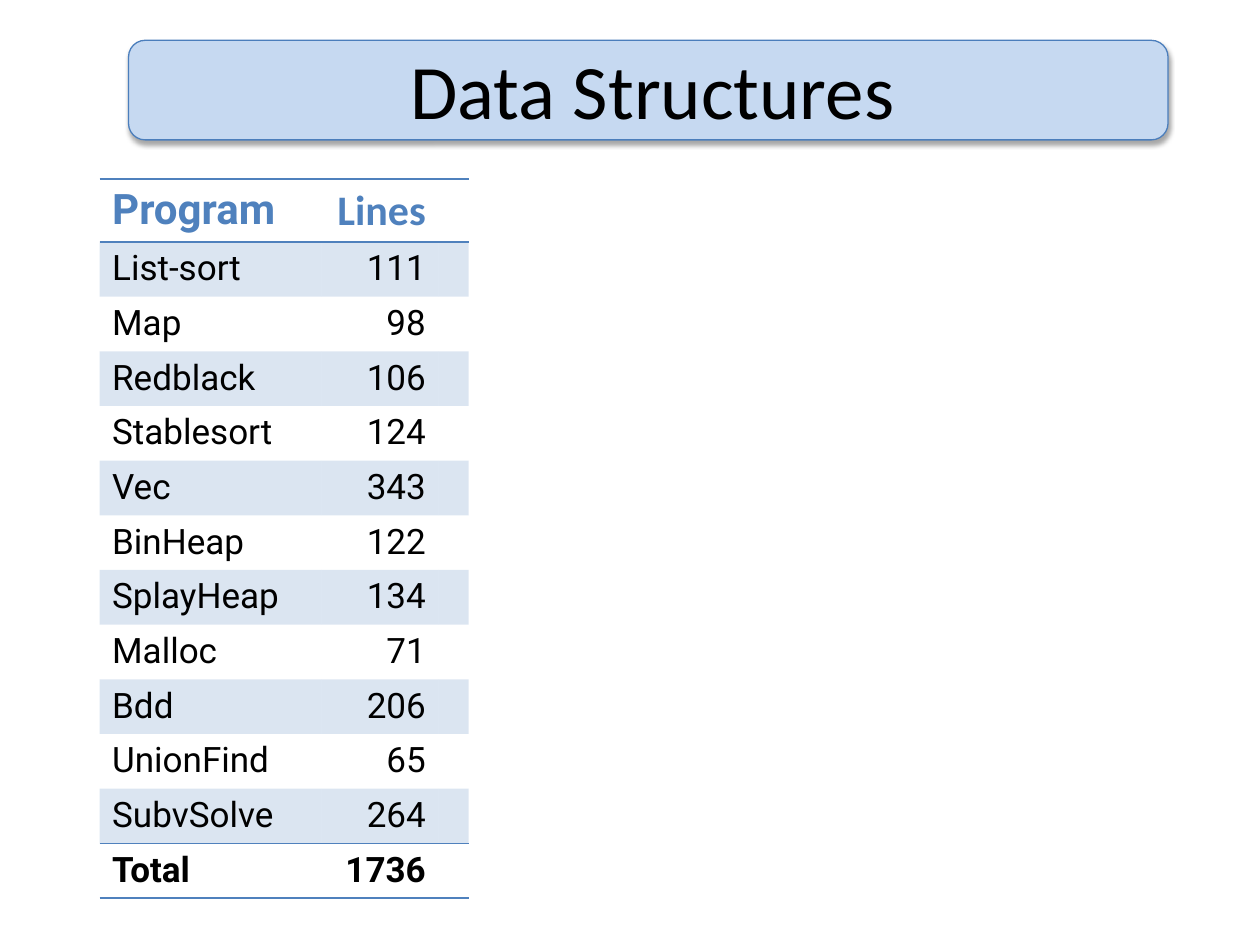
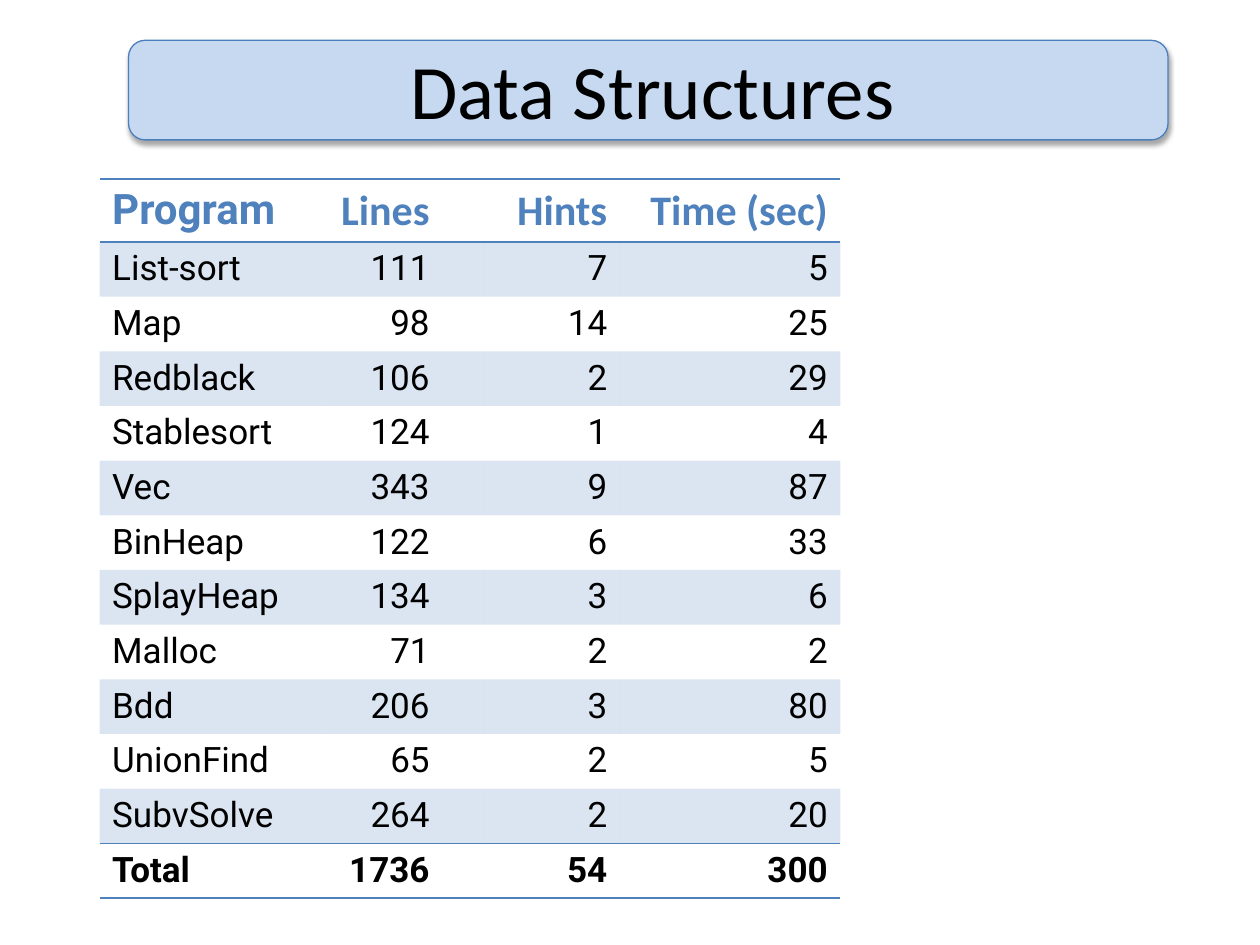
from pptx import Presentation
from pptx.dml.color import RGBColor
from pptx.enum.shapes import MSO_SHAPE as Shape
from pptx.enum.text import MSO_ANCHOR as Anchor, PP_ALIGN as Align
from pptx.oxml import parse_xml
from pptx.oxml.ns import nsdecls, qn
from pptx.util import Inches, Pt

BLACK = RGBColor(0x00, 0x00, 0x00)
ACCENT = RGBColor(0x4F, 0x81, 0xBD)
BAND_FILL = RGBColor(0xC6, 0xD9, 0xF1)
BAND_LINE = RGBColor(0x4B, 0x7E, 0xBC)

TITLE_FONT = "Calibri"
BODY_FONT = "Roboto"
PLAIN_TABLE_STYLE = "{2D5ABB26-0587-4C30-8999-92F81FD0307C}"

# Benchmark figures: one column per heading
HEADINGS = ["Program", "Lines", "Hints", "Time (sec)"]
PROGRAMS = [
    ("List-sort", 111, 7, 5),
    ("Map", 98, 14, 25),
    ("Redblack", 106, 2, 29),
    ("Stablesort", 124, 1, 4),
    ("Vec", 343, 9, 87),
    ("BinHeap", 122, 6, 33),
    ("SplayHeap", 134, 3, 6),
    ("Malloc", 71, 2, 2),
    ("Bdd", 206, 3, 80),
    ("UnionFind", 65, 2, 5),
    ("SubvSolve", 264, 2, 20),
    ("Total", 1736, 54, 300),
]

# Table columns as (heading, width); a heading of None is a spacer
LINES_ONLY = [("Program", 1.76), ("Lines", 0.93), (None, 0.23)]
ALL_FIGURES = [("Program", 1.8), ("Lines", 0.92), (None, 0.33),
               ("Hints", 1.08), ("Time (sec)", 1.75)]


class Deck:
    """Holds the shared style and the current slide."""

    def __init__(self):
        self.presentation = Presentation()
        self.presentation.slide_width = Inches(10)
        self.presentation.slide_height = Inches(7.5)
        self.slide = None

    def add_slide(self, title):
        layout = self.presentation.slide_layouts[6]
        self.slide = self.presentation.slides.add_slide(layout)
        self.add_band()
        self.add_title(title)

    def add_band(self):
        band = self.slide.shapes.add_shape(
            Shape.ROUNDED_RECTANGLE,
            Inches(1.02), Inches(0.32), Inches(8.25), Inches(0.79))
        band.fill.solid()
        band.fill.fore_color.rgb = BAND_FILL
        band.line.color.rgb = BAND_LINE
        band.line.width = Pt(0.75)
        # Soft shadow straight below the band
        band.shadow.inherit = False
        effects = band.element.spPr.find(qn("a:effectLst"))
        effects.append(parse_xml(
            f'<a:outerShdw {nsdecls("a")} blurRad="{Pt(3.1)}" dist="{Pt(1.8)}" '
            'dir="5400000" rotWithShape="0"><a:srgbClr val="000000">'
            '<a:alpha val="35000"/></a:srgbClr></a:outerShdw>'))

    def add_title(self, text):
        box = self.slide.shapes.add_textbox(
            Inches(0.68), Inches(0.08), Inches(9), Inches(1.25))
        frame = box.text_frame
        frame.word_wrap = True
        frame.vertical_anchor = Anchor.MIDDLE
        self.set_text(frame, text, Align.CENTER, TITLE_FONT, 44, BLACK)

    def set_text(self, frame, text, alignment, font_name, size, color, bold=False):
        frame.text = text
        paragraph = frame.paragraphs[0]
        paragraph.alignment = alignment
        font = paragraph.runs[0].font
        font.name = font_name
        font.size = Pt(size)
        font.bold = bold
        font.color.rgb = color

    def add_table(self, columns):
        row_heights = [0.5] + [0.4] * len(PROGRAMS)
        frame = self.slide.shapes.add_table(
            len(row_heights), len(columns), Inches(0.79), Inches(1.42),
            Inches(sum(width for _, width in columns)),
            Inches(sum(row_heights)))
        table = frame.table
        table._tbl.tblPr.find(qn("a:tableStyleId")).text = PLAIN_TABLE_STYLE
        for row, height in zip(table.rows, row_heights):
            row.height = Inches(height)
        for column, (_, width) in zip(table.columns, columns):
            column.width = Inches(width)

        total_row = len(PROGRAMS)
        for row_index, values in enumerate([HEADINGS] + PROGRAMS):
            for column_index, (heading, _) in enumerate(columns):
                cell = table.cell(row_index, column_index)
                if row_index in (0, total_row):
                    self.rule_cell(cell)
                self.fill_cell(cell, shaded=row_index % 2 == 1)
                if heading:
                    value = values[HEADINGS.index(heading)]
                    self.set_cell_text(cell, str(value), heading == "Program",
                                       row_index == 0, row_index == total_row)

    def set_cell_text(self, cell, text, is_name, is_heading, is_total):
        alignment = Align.LEFT if is_name else Align.RIGHT
        if is_heading:
            font_name = BODY_FONT if is_name else TITLE_FONT
            self.set_text(cell.text_frame, text, alignment, font_name, 24, ACCENT, True)
        else:
            self.set_text(cell.text_frame, text, alignment, BODY_FONT, 20, BLACK, is_total)

    def rule_cell(self, cell):
        properties = cell._tc.get_or_add_tcPr()
        for side in ("lnT", "lnB"):
            properties.append(parse_xml(
                f'<a:{side} {nsdecls("a")} w="{Pt(1)}"><a:solidFill>'
                f'<a:srgbClr val="{ACCENT}"/></a:solidFill></a:{side}>'))

    def fill_cell(self, cell, shaded):
        if not shaded:
            cell.fill.background()
            return
        cell.fill.solid()
        cell.fill.fore_color.rgb = ACCENT
        color = cell._tc.tcPr.find(qn("a:solidFill")).find(qn("a:srgbClr"))
        color.append(parse_xml(f'<a:alpha {nsdecls("a")} val="20000"/>'))


def main():
    deck = Deck()
    for columns in (LINES_ONLY, ALL_FIGURES):
        deck.add_slide("Data Structures")
        deck.add_table(columns)
    deck.presentation.save("out.pptx")


if __name__ == "__main__":
    main()
